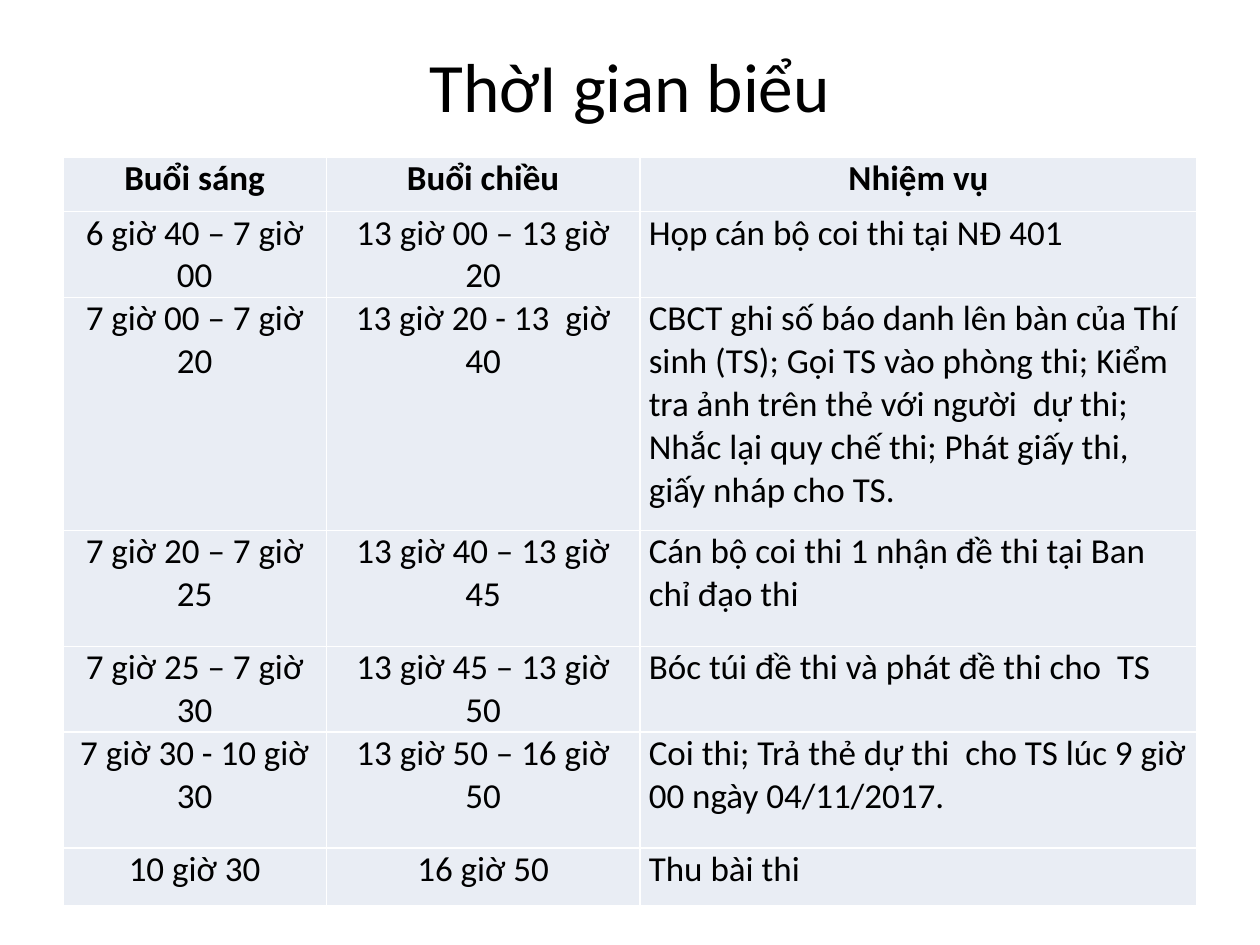
from lxml.etree import SubElement
from pptx import Presentation
from pptx.dml.color import RGBColor
from pptx.enum.text import MSO_ANCHOR, MSO_AUTO_SIZE, PP_ALIGN
from pptx.oxml.ns import qn
from pptx.util import Inches, Pt

BLACK = RGBColor(0x00, 0x00, 0x00)
WHITE = RGBColor(0xFF, 0xFF, 0xFF)
PALE_BLUE = RGBColor(0xE9, 0xED, 0xF4)

TITLE = "ThờI gian biểu"
COLUMN_WIDTHS = [2.09, 2.49, 4.42]
ROW_HEIGHTS = [0.43, 0.46, 1.85, 0.92, 0.46, 0.92, 0.46]
SCHEDULE = [
    ("Buổi sáng", "Buổi chiều", "Nhiệm vụ"),
    ("6 giờ 40 – 7 giờ 00", "13 giờ 00 – 13 giờ 20",
     "Họp cán bộ coi thi tại NĐ 401"),
    ("7 giờ 00 – 7 giờ 20", "13 giờ 20 - 13  giờ 40",
     "CBCT ghi số báo danh lên bàn của Thí sinh (TS); Gọi TS vào phòng thi; "
     "Kiểm tra ảnh trên thẻ với người  dự thi; Nhắc lại quy chế thi; "
     "Phát giấy thi, giấy nháp cho TS."),
    ("7 giờ 20 – 7 giờ 25", "13 giờ 40 – 13 giờ 45",
     "Cán bộ coi thi 1 nhận đề thi tại Ban chỉ đạo thi"),
    ("7 giờ 25 – 7 giờ 30", "13 giờ 45 – 13 giờ 50",
     "Bóc túi đề thi và phát đề thi cho  TS"),
    ("7 giờ 30 - 10 giờ 30", "13 giờ 50 – 16 giờ 50",
     "Coi thi; Trả thẻ dự thi  cho TS lúc 9 giờ 00 ngày 04/11/2017."),
    ("10 giờ 30", "16 giờ 50", "Thu bài thi"),
]


class ScheduleSlide:
    font = "Calibri"
    title_size = Pt(39.6)
    body_size = Pt(20)
    margin = 0.05  # share of the slide width

    def __init__(self, prs):
        self.width, self.height = prs.slide_width, prs.slide_height
        self.s = prs.slides.add_slide(prs.slide_layouts[5])

    def box(self, top, height):
        """Full-width box inside the margins; top and height are slide shares."""
        return (int(self.width * self.margin), int(self.height * top),
                int(self.width * (1 - 2 * self.margin)), int(self.height * height))

    def add_text(self, tf, text, size, align, bold=False):
        p = tf.paragraphs[0]
        p.alignment = align
        r = p.add_run()
        r.text = text
        r.font.name, r.font.size, r.font.bold = self.font, size, bold
        r.font.color.rgb = BLACK

    def title(self, text, top, height):
        sp = self.s.shapes.title
        sp.left, sp.top, sp.width, sp.height = self.box(top, height)
        tf = sp.text_frame
        tf.auto_size = MSO_AUTO_SIZE.NONE
        tf.vertical_anchor = MSO_ANCHOR.MIDDLE
        self.add_text(tf, text, self.title_size, PP_ALIGN.CENTER)

    def table(self, rows, widths, heights, top, height):
        frame = self.s.shapes.add_table(len(rows), len(widths), *self.box(top, height))
        table = frame.table
        for column, width in zip(table.columns, widths):
            column.width = Inches(width)
        for row, row_height in zip(table.rows, heights):
            row.height = Inches(row_height)
        for i, texts in enumerate(rows):
            for j, text in enumerate(texts):
                is_task = i > 0 and j == len(widths) - 1
                align = PP_ALIGN.LEFT if is_task else PP_ALIGN.CENTER
                self.cell(table.cell(i, j), text, align, bold=i == 0)

    def cell(self, cell, text, align, bold):
        cell.margin_left = cell.margin_right = Inches(0.07)
        cell.margin_top = cell.margin_bottom = 0
        self.borders(cell)
        cell.fill.solid()
        cell.fill.fore_color.rgb = PALE_BLUE
        self.add_text(cell.text_frame, text, self.body_size, align, bold)

    def borders(self, cell):
        tc_pr = cell._tc.get_or_add_tcPr()
        for side in ("L", "R", "T", "B"):
            ln = SubElement(tc_pr, qn(f"a:ln{side}"), w=str(Pt(1)))
            fill = SubElement(ln, qn("a:solidFill"))
            SubElement(fill, qn("a:srgbClr"), val=str(WHITE))


def main():
    prs = Presentation()
    prs.slide_width, prs.slide_height = Inches(10), Inches(7.5)
    slide = ScheduleSlide(prs)
    slide.title(TITLE, top=0.04, height=0.1)
    slide.table(SCHEDULE, COLUMN_WIDTHS, ROW_HEIGHTS, top=1 / 6, height=0.73)
    prs.save("out.pptx")


if __name__ == "__main__":
    main()
